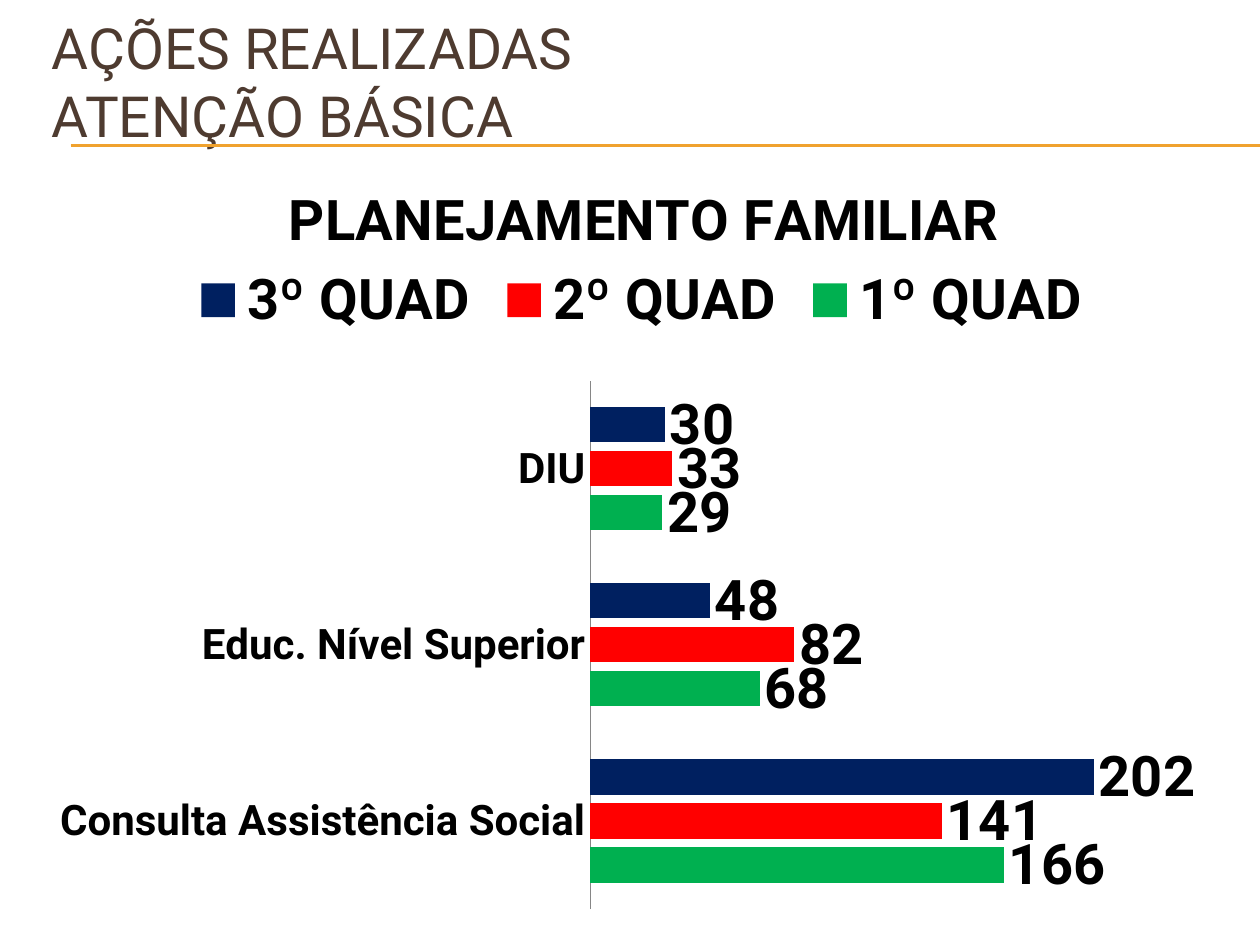
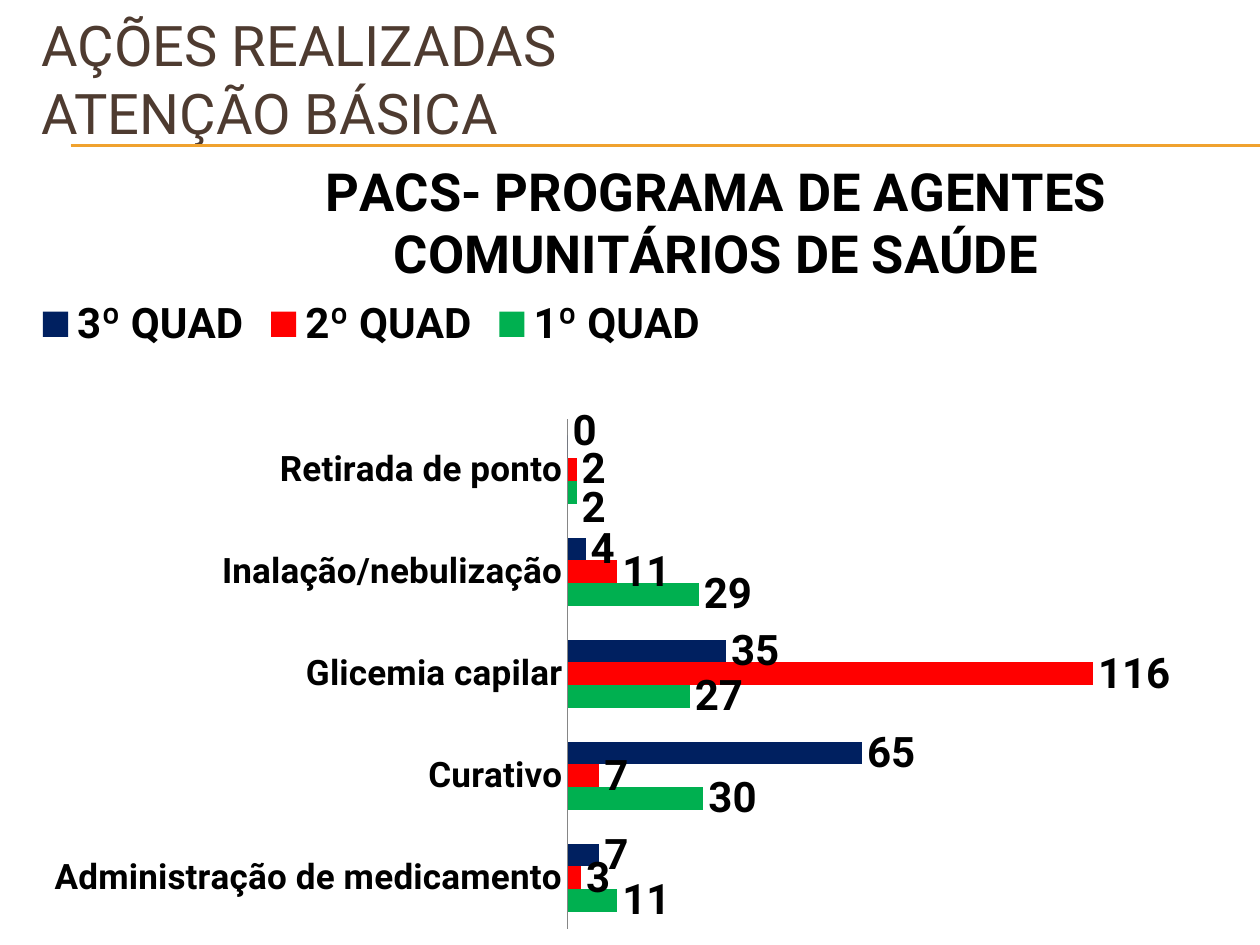
from lxml import etree
from pptx import Presentation
from pptx.chart.data import CategoryChartData
from pptx.dml.color import RGBColor
from pptx.enum.chart import (XL_CHART_TYPE, XL_LABEL_POSITION, XL_LEGEND_POSITION,
                             XL_TICK_LABEL_POSITION, XL_TICK_MARK)
from pptx.enum.shapes import MSO_CONNECTOR
from pptx.enum.text import MSO_ANCHOR, PP_ALIGN
from pptx.oxml.ns import qn
from pptx.util import Inches, Pt

BAR = XL_CHART_TYPE.BAR_CLUSTERED
OUTSIDE = XL_LABEL_POSITION.OUTSIDE_END
TOP = XL_LEGEND_POSITION.TOP
NEXT_TO_AXIS = XL_TICK_LABEL_POSITION.NEXT_TO_AXIS
NO_TICK = XL_TICK_MARK.NONE
STRAIGHT = MSO_CONNECTOR.STRAIGHT
MIDDLE, LEFT = MSO_ANCHOR.MIDDLE, PP_ALIGN.LEFT

FONT = "Roboto"
TITLE = "AÇÕES REALIZADAS\vATENÇÃO BÁSICA"
COLORS = {"title": "4E3B30", "rule": "F0A22E", "text": "000000", "axis": "868686",
          "1º QUAD": "00B050", "2º QUAD": "FF0000", "3º QUAD": "002060"}

# label_shifts: series name -> (point index, vertical shift as a fraction of the chart)
SLIDES = [
    {"title_box": (0.31, 0.23, 9.5, 0.83), "title_size": 32.4,
     "chart_box": (0.31, 1.17, 9.51, 6.17),
     "heading": "PLANEJAMENTO FAMILIAR",
     "heading_size": 32, "legend_size": 32, "label_size": 32, "axis_size": 24,
     "heading_at": (0.2, 0.03), "legend_at": (0.12, 0.14),
     "plot_at": (0.46, 0.3, 0.52, 0.68), "maximum": 250, "overlap": -25,
     "label_shifts": {},
     "cats": ["Consulta Assistência Social", "Educ. Nível Superior", "DIU"],
     "series": {"1º QUAD": (166, 68, 29), "2º QUAD": (141, 82, 33),
                "3º QUAD": (202, 48, 30)}},
    {"title_box": (0.23, 0.16, 9.5, 0.92), "title_size": 32,
     "chart_box": (0.23, 1.17, 9.5, 6.33),
     "heading": "PACS- PROGRAMA DE AGENTES COMUNITÁRIOS DE SAÚDE",
     "heading_size": 30, "legend_size": 24, "label_size": 24, "axis_size": 20,
     "heading_at": (0.24, 0), "legend_at": (0, 0.18),
     "plot_at": (0.45, 0.34, 0.53, 0.64), "maximum": 140, "overlap": 0,
     "label_shifts": {"1º QUAD": (4, 0.02), "3º QUAD": (4, -0.02)},
     "cats": ["Administração de medicamento", "Curativo", "Glicemia capilar",
              "Inalação/nebulização", "Retirada de ponto"],
     "series": {"1º QUAD": (11, 30, 27, 29, 2), "2º QUAD": (3, 7, 116, 11, 2),
                "3º QUAD": (7, 65, 35, 4, 0)}},
]


def style_font(font, size, color="text", bold=True):
    values = {"name": FONT, "size": Pt(size), "bold": bold}
    for name, value in values.items():
        setattr(font, name, value)
    font.color.rgb = RGBColor.from_string(COLORS[color])


def place(element, index, fractions, modes=("xMode", "yMode")):
    """Place a chart part by fractions of the chart; without modes they are shifts."""
    for old in element.findall(qn("c:layout")):
        element.remove(old)
    layout = etree.Element(qn("c:layout"))
    manual = etree.SubElement(layout, qn("c:manualLayout"))
    if len(fractions) == 4:
        etree.SubElement(manual, qn("c:layoutTarget")).set("val", "inner")
    for mode in modes:
        etree.SubElement(manual, qn("c:" + mode)).set("val", "edge")
    for name, value in zip("xywh", fractions):
        etree.SubElement(manual, qn("c:" + name)).set("val", str(value))
    element.insert(index, layout)


prs = Presentation()
prs.slide_width, prs.slide_height = Inches(10), Inches(7.5)

for data in SLIDES:
    s = prs.slides.add_slide(prs.slide_layouts[5])

    # Double rule under the title
    for y in (1.15, 1.16):
        rule = s.shapes.add_connector(STRAIGHT, Inches(0.56), Inches(y), Inches(10), Inches(y))
        rule.line.color.rgb = RGBColor.from_string(COLORS["rule"])
        rule.line.width = Pt(0.75)
        etree.SubElement(rule._element.spPr, qn("a:effectLst"))

    # Slide title
    sp = s.shapes.title
    sp.left, sp.top, sp.width, sp.height = map(Inches, data["title_box"])
    tf = sp.text_frame
    tf.text = TITLE
    tf.word_wrap = True
    tf.vertical_anchor = MIDDLE
    p = tf.paragraphs[0]
    p.alignment = LEFT
    for r in p.runs:
        style_font(r.font, data["title_size"], "title", False)

    # Chart
    cd = CategoryChartData()
    cd.categories = data["cats"]
    for name, values in data["series"].items():
        cd.add_series(name, values)
    chart = s.shapes.add_chart(BAR, *map(Inches, data["chart_box"]), cd).chart
    style_font(chart.font, 10, bold=False)

    # Chart heading and legend
    chart.has_title = True
    heading = chart.chart_title
    heading.text_frame.text = data["heading"]
    style_font(heading.text_frame.paragraphs[0].runs[0].font, data["heading_size"])
    heading.include_in_layout = False
    chart.has_legend = True
    legend = chart.legend
    legend.position = TOP
    legend.include_in_layout = False
    style_font(legend.font, data["legend_size"])

    # Axes
    cat_axis, val_axis = chart.category_axis, chart.value_axis
    cat_axis.major_tick_mark = cat_axis.minor_tick_mark = NO_TICK
    cat_axis.tick_label_position = NEXT_TO_AXIS
    cat_axis.format.line.color.rgb = RGBColor.from_string(COLORS["axis"])
    style_font(cat_axis.tick_labels.font, data["axis_size"])
    val_axis.has_major_gridlines = False
    val_axis.minimum_scale, val_axis.maximum_scale = 0, data["maximum"]
    val_axis.visible = False

    # Bars and their labels
    plot = chart.plots[0]
    plot.vary_by_categories = False
    plot.gap_width, plot.overlap = 150, data["overlap"]
    for series in plot.series:
        series.format.fill.solid()
        series.format.fill.fore_color.rgb = RGBColor.from_string(COLORS[series.name])
        labels = series.data_labels
        labels.show_value = True
        labels.position = OUTSIDE
        style_font(labels.font, data["label_size"])

        # Spread the labels of very short bars
        if series.name in data["label_shifts"]:
            index, shift = data["label_shifts"][series.name]
            label = series.points[index].data_label
            style_font(label.font, data["label_size"])
            label.position = OUTSIDE
            place(labels._element.find(qn("c:dLbl")), 1, (0, shift), modes=())

    # Places inside the chart
    place(heading._element, 1, data["heading_at"])
    place(legend._element, 1, data["legend_at"])
    place(chart._chartSpace.chart.plotArea, 0, data["plot_at"])

prs.save("out.pptx")
